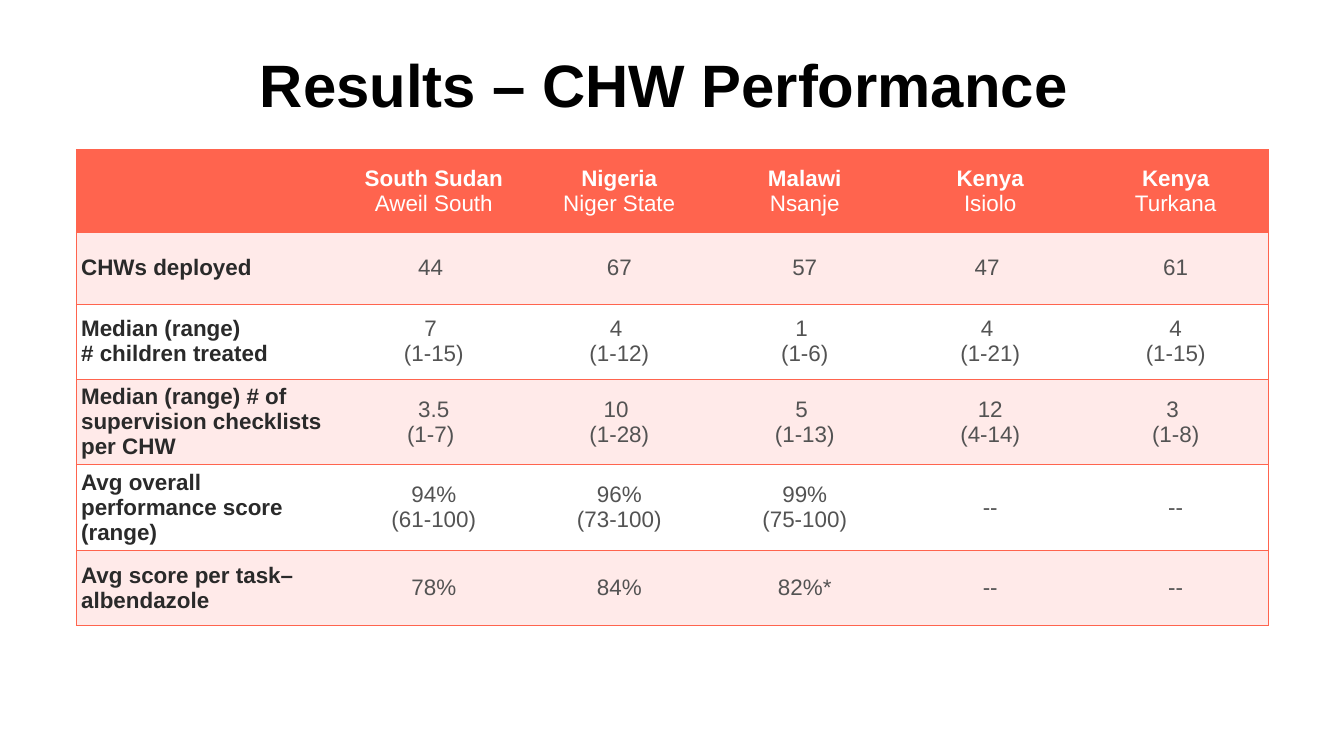
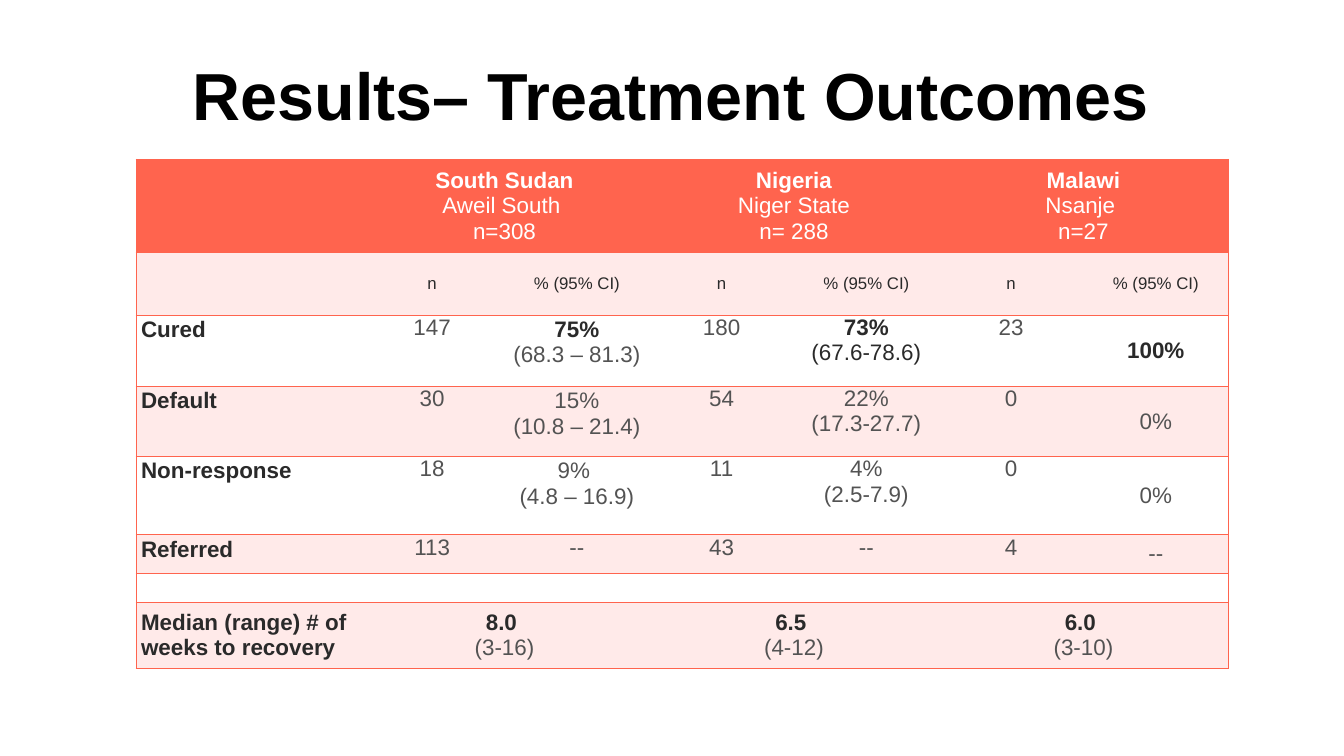
from lxml.etree import SubElement
from pptx import Presentation
from pptx.dml.color import RGBColor
from pptx.enum.text import MSO_ANCHOR as Anchor, PP_ALIGN as Align
from pptx.oxml.ns import qn
from pptx.util import Inches, Pt

WIDTH, HEIGHT = 26.67, 15
FONT = "Arial"
BLACK, WHITE = "000000", "FFFFFF"
CORAL, BLUSH = "FF644E", "FFEAE9"
DARK, GREY = "2A2A2A", "535353"
PLAIN_TABLE = "{2D5ABB26-0587-4C30-8999-92F81FD0307C}"
TIGHT = (0.01, 0.01, 0.01, 0)
ROOMY = (0.1, 0.05, 0.1, 0.05)

PERFORMANCE = [
    ["", "South Sudan\nAweil South", "Nigeria\nNiger State", "Malawi\nNsanje",
     "Kenya\nIsiolo", "Kenya\nTurkana"],
    ["CHWs deployed", "44 ", "67", "57", "47 ", "61"],
    ["Median (range) \n# children treated", "7 \n(1-15)", "4 \n(1-12)", "1 \n(1-6)",
     "4 \n(1-21)", "4\n(1-15)"],
    ["Median (range) # of supervision checklists per CHW", "3.5\n(1-7) ", "10 \n(1-28)",
     "5 \n(1-13)", "12\n(4-14)", "3 \n(1-8)"],
    ["Avg overall performance score (range)", "94%\n(61-100)", "96%\n(73-100)",
     "99%\n(75-100)", "--", "--"],
    ["Avg score per task– albendazole", "78%", "84%", "82%*", "--", "--"],
]
OUTCOMES = [
    ["", "South Sudan\nAweil South \nn=308", None, "Nigeria\nNiger State\nn= 288", None,
     "Malawi\nNsanje \nn=27", None],
    [""] + ["n", "% (95% CI)"] * 3,
    ["Cured", "147", "75%\n(68.3 – 81.3)", "180", "73%\n(67.6-78.6)", "23", "100%"],
    ["Default", "30", "15%\n(10.8 – 21.4)", "54", "22%\n(17.3-27.7)", "0", "0%"],
    ["Non-response", "18", "9% \n(4.8 – 16.9)", "11", "4%\n(2.5-7.9)", "0", "0%"],
    ["Referred", "113", "--", "43", "--", "4", "--"],
    [""] * 7,
    ["Median (range) # of weeks to recovery", "8.0 \n(3-16)", None, "6.5 \n(4-12)", None,
     "6.0 \n(3-10)", None],
]


def rgb(color):
    """Turn a hex string into a colour."""
    return RGBColor.from_string(color)


def x(percent):
    """Length as a percentage of the slide's width."""
    return Inches(WIDTH * percent / 100)


def y(percent):
    """Length as a percentage of the slide's height."""
    return Inches(HEIGHT * percent / 100)


def set_font(p, size, color, bold):
    """Set the font of a whole paragraph."""
    p.font.name, p.font.size, p.font.bold = FONT, Pt(size), bold
    p.font.color.rgb = rgb(color)


def set_margins(box, margins):
    """Set left, top, right and bottom margins in inches."""
    box.margin_left, box.margin_top, box.margin_right, box.margin_bottom = map(Inches, margins)


def add_title(s, text, left, top, width, size):
    """Add a centred slide title."""
    tf = s.shapes.add_textbox(x(left), y(top), x(width), y(22.13)).text_frame
    tf.word_wrap = True
    tf.vertical_anchor = Anchor.MIDDLE
    set_margins(tf, [0.08] * 4)
    p = tf.paragraphs[0]
    p.text, p.alignment = text, Align.CENTER
    set_font(p, size, BLACK, True)


def add_borders(cell, sides):
    """Draw coral lines on the given sides of a cell."""
    for side in sides:
        ln = SubElement(cell._tc.get_or_add_tcPr(), qn(f"a:ln{side}"), w=str(Pt(1)))
        SubElement(SubElement(ln, qn("a:solidFill")), qn("a:srgbClr"), val=CORAL)


def fill_cell(cell, text, align, fonts):
    """Write one paragraph a line, with the fonts for the first and the other lines."""
    tf = cell.text_frame
    tf.text = text
    for i, p in enumerate(tf.paragraphs):
        p.alignment = align
        set_font(p, *fonts[min(i, 1)])


def cell_fonts(row, col, subhead, lead):
    """Choose size, colour and weight for a cell's first and other lines."""
    if row == 0:
        return (32, WHITE, True), (32, WHITE, False)
    if col == 0:
        return [(32, DARK, True)] * 2
    if row == subhead:
        return [(24, DARK, False)] * 2
    if (row, col) in lead:
        return (32, DARK, True), (32, lead[row, col], False)
    return [(32, GREY, False)] * 2


def add_results(s, rows, left, top, widths, heights, layout, subhead=None, lead=()):
    """Add a banded results table in which None continues the cell on its left."""
    frame = s.shapes.add_table(len(rows), len(rows[0]), x(left), y(top),
                               x(sum(widths)), y(sum(heights)))
    table = frame.table
    table._tbl.tblPr[0].text = PLAIN_TABLE
    for column, width in zip(table.columns, widths):
        column.width = x(width)
    for line, height in zip(table.rows, heights):
        line.height = y(height)
    for r, texts in enumerate(rows):
        fill = CORAL if r == 0 else (WHITE, BLUSH)[r % 2]
        for c, text in enumerate(texts):
            cell = table.cell(r, c)
            at_right = all(t is None for t in texts[c + 1:])
            add_borders(cell, "L" * (c == 0) + "R" * at_right + "TB")
            cell.fill.solid()
            cell.fill.fore_color.rgb = rgb(fill)
            if text is None:
                table.cell(r, c - 1).merge(cell)
            elif text:
                cell.vertical_anchor, margins = layout(r, c)
                set_margins(cell, margins)
                fill_cell(cell, text, Align.CENTER if c else Align.LEFT,
                          cell_fonts(r, c, subhead, lead))


def performance_layout(row, col):
    """Anchor and margins in the performance table."""
    return Anchor.MIDDLE, ROOMY if row else TIGHT


def outcome_layout(row, col):
    """Anchor and margins in the outcomes table."""
    if row not in range(2, 6):
        return performance_layout(row, col)
    roomy = col == 0 or (col == 2 and row < 5)
    return Anchor.MIDDLE if col == 6 else Anchor.TOP, ROOMY if roomy else TIGHT


def add_performance_slide(prs):
    """Build the slide on CHW performance."""
    s = prs.slides.add_slide(prs.slide_layouts[6])
    add_title(s, "Results – CHW Performance ", 18, 0, 64, 85.5)
    add_results(s, PERFORMANCE, 5.66, 19.8, [19.72] + [13.8] * 5,
                [10.87, 9.53, 9.93, 10.6, 10.6, 9.93], performance_layout)


def add_outcomes_slide(prs):
    """Build the slide on treatment outcomes."""
    s = prs.slides.add_slide(prs.slide_layouts[6])
    add_title(s, "Results– Treatment Outcomes ", 12.71, 1.33, 75.85, 95)
    lead = {(2, 2): GREY, (2, 4): DARK, (2, 6): GREY} | {(7, c): GREY for c in (1, 3, 5)}
    add_results(s, OUTCOMES, 10.12, 21.07, [16.65] + [10.77] * 6,
                [12.33, 8.27, 9.4, 9.27, 10.33, 5.13, 3.87, 8.73],
                outcome_layout, subhead=1, lead=lead)


def main():
    """Build and save the presentation."""
    prs = Presentation()
    prs.slide_width, prs.slide_height = Inches(WIDTH), Inches(HEIGHT)
    add_performance_slide(prs)
    add_outcomes_slide(prs)
    prs.save("out.pptx")


if __name__ == "__main__":
    main()
